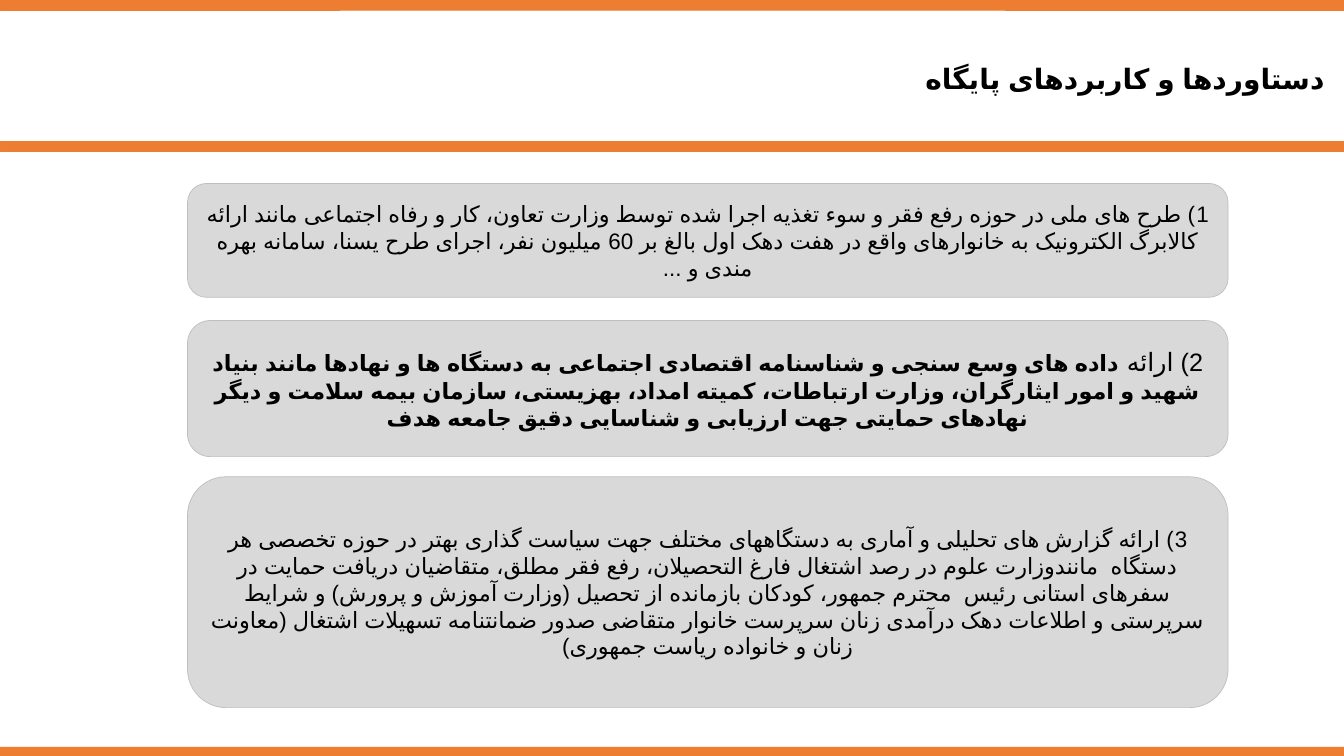
from dataclasses import dataclass

from lxml import etree
from pptx import Presentation
from pptx import util as u
from pptx.dml import color
from pptx.enum import shapes, text
from pptx.oxml import ns


@dataclass(frozen=True)
class Theme:
    font: str = "Calibri"
    script: str = "Arial"
    lang: str = "fa-IR"
    ink: str = "000000"
    bar: str = "ED7D31"
    card: str = "D9D9D9"
    edge: str = "BFBFBF"
    head: int = 20
    lead: int = 18
    body: int = 16


@dataclass(frozen=True)
class Run:
    words: str
    size: int
    bold: bool = False


@dataclass(frozen=True)
class Card:
    top: float
    high: float
    runs: tuple[Run, ...]


THEME = Theme()
WIDE, TALL = 13.33, 7.5
BAR_TOPS = (0, 7.41, 1.4)
BAR_HIGH = 0.1
CARD_LEFT, CARD_WIDE = 1.86, 10.32
TITLE = Run("دستاوردها و کاربردهای پایگاه", THEME.head, True)
CARDS = (
    Card(1.82, 1.13, (
        Run("1) طرح های ملی در حوزه رفع فقر و سوء تغذیه اجرا شده توسط وزارت تعاون، "
            "کار و رفاه اجتماعی مانند ارائه کالابرگ الکترونیک به خانوارهای واقع در "
            "هفت دهک اول بالغ بر 60 میلیون نفر، اجرای طرح یسنا، سامانه بهره مندی و ...",
            THEME.body),
    )),
    Card(3.18, 1.35, (
        Run("2) ارائه ", THEME.lead),
        Run("داده های وسع سنجی و شناسنامه اقتصادی اجتماعی به دستگاه ها و نهادها "
            "مانند بنیاد شهید و امور ایثارگران، وزارت ارتباطات، کمیته امداد، "
            "بهزیستی، سازمان بیمه سلامت و دیگر نهادهای حمایتی جهت ارزیابی و "
            "شناسایی دقیق جامعه هدف", THEME.body, True),
    )),
    Card(4.73, 2.29, (
        Run("3) ارائه گزارش های تحلیلی و آماری به دستگاههای مختلف جهت سیاست گذاری "
            "بهتر در حوزه تخصصی هر دستگاه  مانندوزارت علوم در رصد اشتغال فارغ "
            "التحصیلان، رفع فقر مطلق، متقاضیان دریافت حمایت در سفرهای استانی "
            "رئيس  محترم جمهور، کودکان بازمانده از تحصیل (وزارت آموزش و پرورش) و "
            "شرایط سرپرستی و اطلاعات دهک درآمدی زنان سرپرست خانوار متقاضی صدور "
            "ضمانتنامه تسهیلات اشتغال (معاونت زنان و خانواده ریاست جمهوری)",
            THEME.body),
    )),
)


def tint(code: str) -> color.RGBColor:
    return color.RGBColor.from_string(code)


def write(shape, runs: tuple[Run, ...], *, align, gap: float = 1.0) -> None:
    frame = shape.text_frame
    frame.word_wrap = True
    frame.auto_size = text.MSO_AUTO_SIZE.NONE
    frame.vertical_anchor = text.MSO_ANCHOR.MIDDLE
    para = frame.paragraphs[0]
    para.alignment = align
    para.line_spacing = gap
    para._p.get_or_add_pPr().set("rtl", "1")
    for item in runs:
        run = para.add_run()
        run.text = item.words
        run.font.name = THEME.font
        run.font.size = u.Pt(item.size)
        run.font.bold = item.bold
        run.font.color.rgb = tint(THEME.ink)
        props = run._r.get_or_add_rPr()
        props.set("lang", THEME.lang)
        etree.SubElement(props, ns.qn("a:cs"), typeface=THEME.script)


def place(shape, left: float, top: float, wide: float, high: float) -> None:
    shape.left, shape.top = u.Inches(left), u.Inches(top)
    shape.width, shape.height = u.Inches(wide), u.Inches(high)


def draw(slide, kind, left: float, top: float, wide: float, high: float,
         fill: str, line: str):
    box = map(u.Inches, (left, top, wide, high))
    shape = slide.shapes.add_shape(kind, *box)
    shape.shadow.inherit = False
    shape.fill.solid()
    shape.fill.fore_color.rgb = tint(fill)
    shape.line.color.rgb = tint(line)
    shape.line.width = u.Pt(0.5)
    return shape


def main() -> None:
    deck = Presentation()
    deck.slide_width, deck.slide_height = u.Inches(WIDE), u.Inches(TALL)
    slide = deck.slides.add_slide(deck.slide_layouts[5])
    kinds = shapes.MSO_SHAPE
    for top in BAR_TOPS:
        draw(slide, kinds.RECTANGLE, 0, top, WIDE, BAR_HIGH, THEME.bar, THEME.bar)
    title = slide.shapes.title
    place(title, 4.39, 0.24, 8.85, 1.11)
    write(title, (TITLE,), align=text.PP_ALIGN.RIGHT, gap=0.9)
    for card in CARDS:
        shape = draw(slide, kinds.ROUNDED_RECTANGLE, CARD_LEFT, card.top,
                     CARD_WIDE, card.high, THEME.card, THEME.edge)
        write(shape, card.runs, align=text.PP_ALIGN.CENTER)
    deck.save("out.pptx")


if __name__ == "__main__":
    main()
